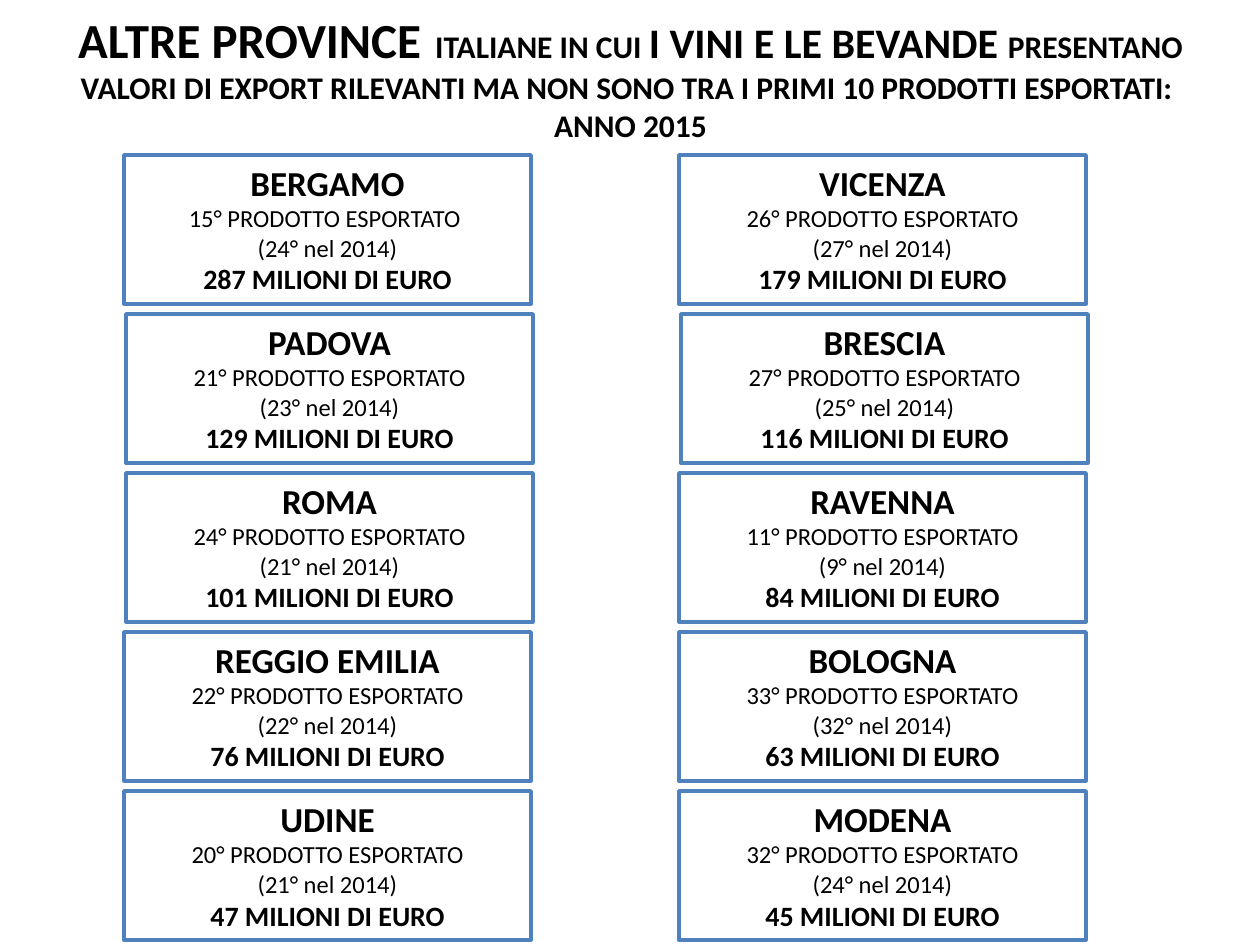
from pptx import Presentation
from pptx.dml.color import RGBColor as Rgb
from pptx.enum.shapes import MSO_SHAPE as Shape
from pptx.enum.text import MSO_ANCHOR as Anchor, MSO_AUTO_SIZE as Fit, PP_ALIGN as Align
from pptx.util import Emu, Pt

SCALE = 914400 / 126
FONT = "Calibri"
INK = "000000"
EDGE = "4F81BD"
WIDTH, HEIGHT = 407, 149
TOP, PITCH = 155, 159

HEAD = [
    [
        ("ALTRE PROVINCE", 28, True),
        ("  ITALIANE IN CUI ", 18, True),
        ("I VINI E LE BEVANDE ", 24, True),
        ("PRESENTANO VALORI DI EXPORT RILEVANTI MA NON SONO "
         "TRA I PRIMI 10 PRODOTTI ESPORTATI: ", 18, True),
    ],
    [("ANNO 2015", 18, True)],
]

LEFT = [
    ("BERGAMO", "15° PRODOTTO ESPORTATO ", 24, 287, 124),
    ("PADOVA", "21° PRODOTTO ESPORTATO", 23, 129, 126),
    ("ROMA", "24° PRODOTTO ESPORTATO", 21, 101, 126),
    ("REGGIO EMILIA", "22° PRODOTTO ESPORTATO", 22, 76, 124),
    ("UDINE", "20° PRODOTTO ESPORTATO", 21, 47, 124),
]
RIGHT = [
    ("VICENZA", "26° PRODOTTO ESPORTATO", 27, 179, 679),
    ("BRESCIA", "27° PRODOTTO ESPORTATO", 25, 116, 681),
    ("RAVENNA", "11° PRODOTTO ESPORTATO", 9, 84, 679),
    ("BOLOGNA", "33° PRODOTTO ESPORTATO", 32, 63, 679),
    ("MODENA", "32° PRODOTTO ESPORTATO", 24, 45, 679),
]


def px(n):
    return Emu(round(n * SCALE))


def color(code):
    return Rgb.from_string(code)


def write(frame, paras):
    frame.word_wrap = True
    frame.auto_size = Fit.SHAPE_TO_FIT_TEXT
    frame.vertical_anchor = Anchor.TOP
    for i, runs in enumerate(paras):
        para = frame.add_paragraph() if i else frame.paragraphs[0]
        para.alignment = Align.CENTER
        for text, size, bold in runs:
            run = para.add_run()
            run.text = text
            font = run.font
            font.name = FONT
            font.size = Pt(size)
            font.bold = bold
            font.color.rgb = color(INK)


def add_title(slide):
    title = slide.shapes.title
    title.left, title.top = px(25), px(3)
    title.width, title.height = px(1211), px(149)
    write(title.text_frame, HEAD)


def add_card(slide, row, item):
    name, rank, prior, value, left = item
    card = slide.shapes.add_shape(
        Shape.RECTANGLE, px(left), px(TOP + row * PITCH), px(WIDTH), px(HEIGHT))
    card.shadow.inherit = False
    card.fill.background()
    card.line.color.rgb = color(EDGE)
    card.line.width = Pt(2)
    write(card.text_frame, [
        [(name, 20, True)],
        [(rank, 14, False)],
        [(f"({prior}° nel 2014)", 14, False)],
        [(f"{value} MILIONI DI EURO", 16, True)],
    ])


def main():
    deck = Presentation()
    deck.slide_width, deck.slide_height = px(1260), px(945)
    slide = deck.slides.add_slide(deck.slide_layouts[5])
    add_title(slide)
    for group in (LEFT, RIGHT):
        for row, item in enumerate(group):
            add_card(slide, row, item)
    deck.save("out.pptx")


if __name__ == "__main__":
    main()
